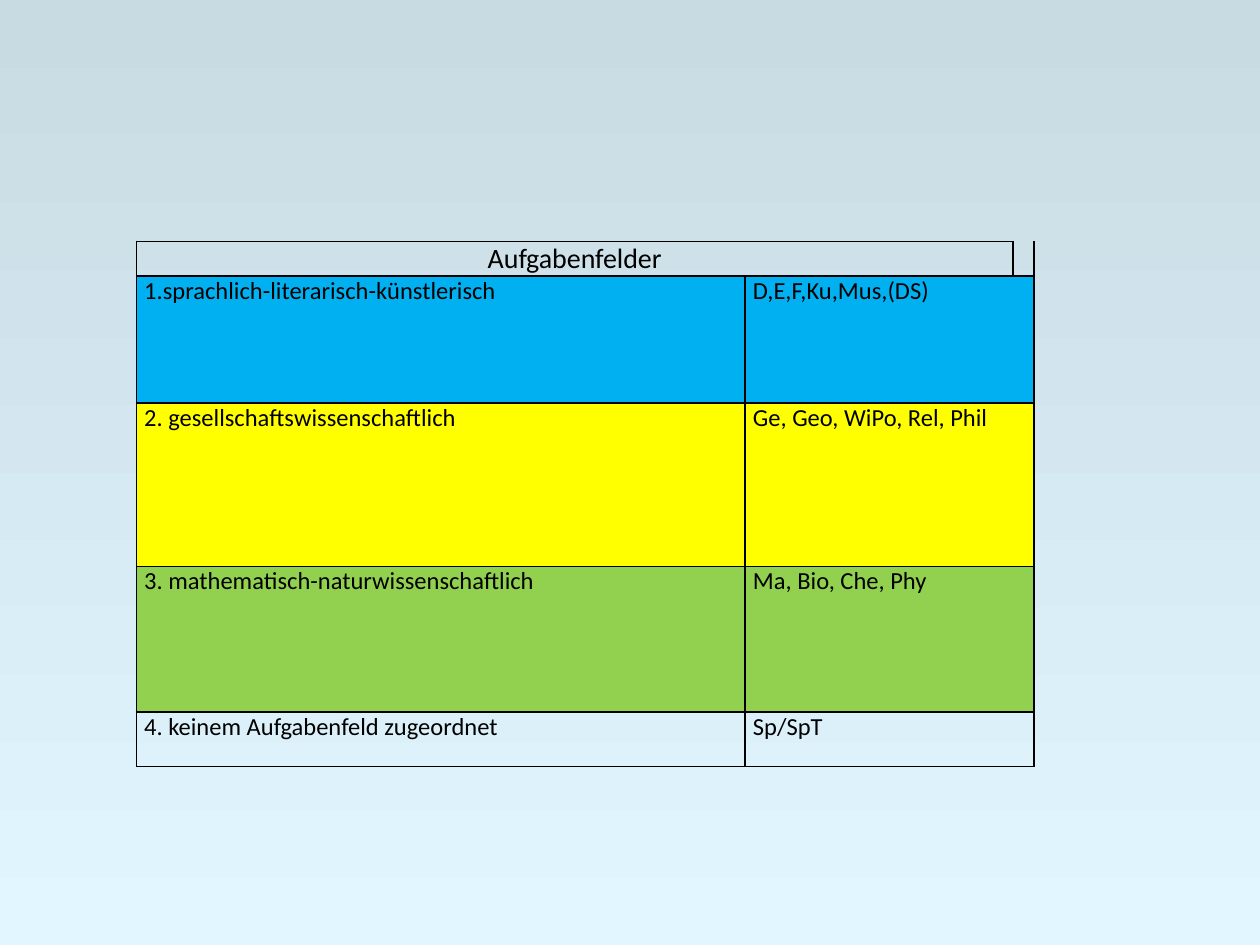
from dataclasses import dataclass
from typing import Optional

from lxml.etree import SubElement
from pptx import Presentation
from pptx.dml.color import RGBColor
from pptx.enum.text import PP_ALIGN
from pptx.oxml.ns import qn
from pptx.util import Pt

BLACK = RGBColor(0x00, 0x00, 0x00)
BLUE = RGBColor(0x00, 0xB0, 0xF0)
YELLOW = RGBColor(0xFF, 0xFF, 0x00)
GREEN = RGBColor(0x92, 0xD0, 0x50)
SKY_TOP = RGBColor(0xC8, 0xDB, 0xE3)
SKY_BOTTOM = RGBColor(0xE1, 0xF6, 0xFF)

FONT_NAME = "Calibri"
NO_STYLE = "{2D5ABB26-0587-4C30-8999-92F81FD0307C}"
COLUMN_WIDTHS = (347.9, 153.2, 6.6)
HEADER_HEIGHT = 19.5
TABLE_LEFT, TABLE_TOP = 77.9, 138
CELL_MARGIN = 4.5


@dataclass(frozen=True)
class SubjectField:
    name: str
    subjects: str
    height: float
    color: Optional[RGBColor] = None


FIELDS = (
    SubjectField("1.sprachlich-literarisch-künstlerisch", "D,E,F,Ku,Mus,(DS)", 72.6, BLUE),
    SubjectField("2. gesellschaftswissenschaftlich", "Ge, Geo, WiPo, Rel, Phil", 93.6, YELLOW),
    SubjectField("3. mathematisch-naturwissenschaftlich", "Ma, Bio, Che, Phy", 83, GREEN),
    SubjectField("4. keinem Aufgabenfeld zugeordnet", "Sp/SpT", 31.2),
)


def write_text(cell, text: str, *, size: float = 14, color: RGBColor = BLACK,
               alignment: PP_ALIGN = PP_ALIGN.LEFT) -> None:
    paragraph = cell.text_frame.paragraphs[0]
    paragraph.alignment = alignment
    run = paragraph.add_run()
    run.text = text
    run.font.name = FONT_NAME
    run.font.size = Pt(size)
    run.font.color.rgb = color


def format_cell(cell, sides: str = "LRTB", color: Optional[RGBColor] = None) -> None:
    cell.margin_left = cell.margin_right = Pt(CELL_MARGIN)
    cell.margin_top = cell.margin_bottom = Pt(0)
    properties = cell._tc.get_or_add_tcPr()
    for side in sides:
        line = SubElement(properties, qn(f"a:ln{side}"), w=str(Pt(1)))
        line_fill = SubElement(line, qn("a:solidFill"))
        SubElement(line_fill, qn("a:srgbClr"), val=str(BLACK))
    if color is None:
        cell.fill.background()
    else:
        cell.fill.solid()
        cell.fill.fore_color.rgb = color


def paint_background(slide) -> None:
    fill = slide.background.fill
    fill.gradient()
    fill.gradient_angle = 270
    for stop, color in zip(fill.gradient_stops, (SKY_TOP, SKY_BOTTOM)):
        stop.color.rgb = color


def add_field_table(slide) -> None:
    heights = [HEADER_HEIGHT] + [field.height for field in FIELDS]
    frame = slide.shapes.add_table(
        len(heights), len(COLUMN_WIDTHS), Pt(TABLE_LEFT), Pt(TABLE_TOP),
        Pt(sum(COLUMN_WIDTHS)), Pt(sum(heights)))
    table = frame.table
    table.first_row = table.horz_banding = False
    table._tbl.tblPr.find(qn("a:tableStyleId")).text = NO_STYLE
    for column, width in zip(table.columns, COLUMN_WIDTHS):
        column.width = Pt(width)
    for row, height in zip(table.rows, heights):
        row.height = Pt(height)

    table.cell(0, 0).merge(table.cell(0, 1))
    for column_index, sides in enumerate(("LRTB", "LRTB", "LB")):
        format_cell(table.cell(0, column_index), sides)
    write_text(table.cell(0, 0), "Aufgabenfelder", size=16, alignment=PP_ALIGN.CENTER)
    corner = table.cell(0, 2).text_frame.paragraphs[0]
    SubElement(corner._p, qn("a:endParaRPr"), sz="1400")

    for row_index, field in enumerate(FIELDS, start=1):
        table.cell(row_index, 1).merge(table.cell(row_index, 2))
        for column_index in range(len(COLUMN_WIDTHS)):
            format_cell(table.cell(row_index, column_index), color=field.color)
        write_text(table.cell(row_index, 0), field.name)
        write_text(table.cell(row_index, 1), field.subjects)


def main() -> None:
    presentation = Presentation()
    presentation.slide_width = Pt(720)
    presentation.slide_height = Pt(540)
    slide = presentation.slides.add_slide(presentation.slide_layouts[6])
    paint_background(slide)
    add_field_table(slide)
    presentation.save("out.pptx")


if __name__ == "__main__":
    main()
